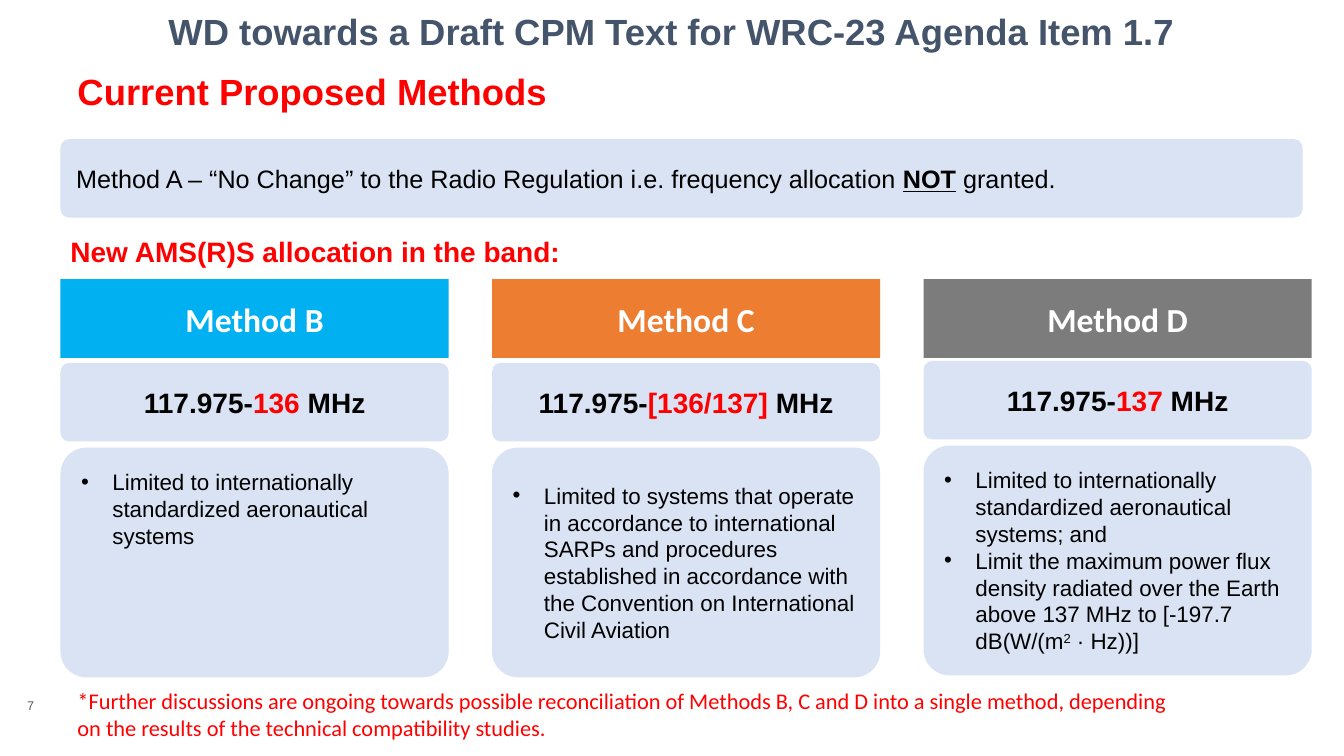
from lxml import etree
from pptx import Presentation, util as u
from pptx.dml.color import RGBColor
from pptx.enum import shapes, text
from pptx.oxml import ns

THEME = {
    "color": {"ink": "000000", "alert": "FF0000", "title": "44546A", "panel": "DAE3F3",
              "white": "FFFFFF", "number": "595959",
              "B": "00B0F0", "C": "ED7D31", "D": "7C7C7C"},
    "size": {"title": 26, "method": 24, "band": 20, "lead": 18, "body": 16, "number": 9},
    "corner": 0.113,
    "inset": 0.13,
    "indent": 0.31,
}
RECT = shapes.MSO_SHAPE.RECTANGLE
ROUND = shapes.MSO_SHAPE.ROUNDED_RECTANGLE
TOP, MIDDLE = text.MSO_ANCHOR.TOP, text.MSO_ANCHOR.MIDDLE
LEFT, CENTER = text.PP_ALIGN.LEFT, text.PP_ALIGN.CENTER

# Grid in inches
MARGIN, COLUMN, STEP = 0.6, 3.85, 4.28
TEXT_LEFT, TEXT_WIDTH = 0.67, 11.22
ROW = 0.78
HEAD_TOP, BAND_TOP, DETAIL_TOP, DETAIL_HEIGHT = 2.77, 3.6, 4.44, 2.28

deck = Presentation()
deck.slide_width, deck.slide_height = u.Inches(13.33), u.Inches(7.5)
page = deck.slides.add_slide(deck.slide_layouts[6])


def add_block(place, kind=None, fill="panel"):
    """Add a filled shape of the given kind, or a text box when there is none."""
    lengths = [u.Inches(length) for length in place]
    if kind is None:
        return page.shapes.add_textbox(*lengths)
    block = page.shapes.add_shape(kind, *lengths)
    block.shadow.inherit = False
    block.fill.solid()
    block.fill.fore_color.rgb = RGBColor.from_string(THEME["color"][fill])
    block.line.fill.background()
    if kind == ROUND:
        block.adjustments[0] = THEME["corner"]
        for side in ("left", "top", "right", "bottom"):
            setattr(block.text_frame, f"margin_{side}", u.Inches(THEME["inset"]))
    return block


def write(block, paragraphs, size, color="ink", font="Arial", bold=False, align=LEFT,
          anchor=MIDDLE, bullet=False, spacing=None):
    """Fill a block with paragraphs, each a list of (words, format changes) spans."""
    frame = block.text_frame
    frame.word_wrap, frame.vertical_anchor = True, anchor
    for index, spans in enumerate(paragraphs):
        para = frame.add_paragraph() if index else frame.paragraphs[0]
        para.alignment = align
        if spacing:
            para.line_spacing = spacing
        if bullet:
            properties = para._p.get_or_add_pPr()
            indent = u.Inches(THEME["indent"])
            properties.set("marL", str(indent))
            properties.set("indent", str(-indent))
            etree.SubElement(properties, ns.qn("a:buFont")).set("typeface", "Arial")
            etree.SubElement(properties, ns.qn("a:buChar")).set("char", "•")
        for words, changes in spans:
            span = para.add_run()
            span.text = words
            look = {"name": font, "size": u.Pt(THEME["size"][size]), "bold": bold,
                    "color": color, "raised": False} | changes
            span.font.color.rgb = RGBColor.from_string(THEME["color"][look.pop("color")])
            if look.pop("raised"):
                span.font._element.set("baseline", "30000")
            for name, value in look.items():
                setattr(span.font, name, value)


write(add_block((0, 0.02, 13.33, 0.62)),
      [[("WD towards a Draft CPM Text for WRC-23 Agenda Item 1.7", {})]],
      "title", "title", bold=True, align=CENTER, spacing=0.9)
write(add_block((TEXT_LEFT, 0.3, TEXT_WIDTH, 1.25)),
      [[("Current Proposed Methods", {})]], "title", "alert", bold=True, spacing=0.9)
write(add_block((MARGIN, 1.38, 12.32, ROW), ROUND),
      [[("Method A – “No Change” to the Radio Regulation i.e. frequency allocation ", {}),
        ("NOT", {"bold": True, "underline": True}),
        (" granted.", {})]], "lead")
write(add_block((MARGIN, 2.28, 6.66, 0.44)),
      [[("New AMS(R)S allocation in the band:", {})]],
      "band", "alert", bold=True, anchor=TOP)

# Letter, upper band limit, detail paragraphs, detail anchor, upward shift of the panels
methods = [
    ("B", "136",
     [[("Limited to internationally standardized aeronautical systems", {})]], TOP, 0),
    ("C", "[136/137]",
     [[("Limited to systems that operate in accordance to international SARPs and "
        "procedures established in accordance with the Convention on International "
        "Civil Aviation", {})]], MIDDLE, 0),
    ("D", "137",
     [[("Limited to internationally standardized aeronautical systems; and", {})],
      [("Limit the maximum power flux density radiated over the Earth above 137 MHz to "
        "[-197.7 dB(W/(m", {}), ("2", {"raised": True}), (" · Hz))]", {})]], TOP, 0.02),
]
for column, (letter, limit, details, anchor, shift) in enumerate(methods):
    left = MARGIN + column * STEP
    write(add_block((left, HEAD_TOP, COLUMN, ROW), RECT, letter),
          [[(f"Method {letter}", {})]], "method", "white", "Calibri", True, CENTER)
    write(add_block((left, BAND_TOP - shift, COLUMN, ROW), ROUND),
          [[("117.975-", {}), (f"{limit} ", {"color": "alert"}), ("MHz", {})]],
          "band", bold=True, align=CENTER)
    detail = add_block((left, DETAIL_TOP - shift, COLUMN, DETAIL_HEIGHT), ROUND)
    write(detail, details, "body", anchor=anchor, bullet=True)
    if anchor == MIDDLE:
        detail.text_frame.paragraphs[0].space_after = u.Pt(12)

write(add_block((TEXT_LEFT, 6.77, TEXT_WIDTH, 0.64)),
      [[("*Further discussions are ongoing towards possible reconciliation of Methods B, C "
         "and D into a single method, depending on the results of the technical "
         "compatibility studies.", {})]], "body", "alert", "Calibri", anchor=TOP)
write(add_block((0.17, 6.8, 2.33, 0.4)), [[("7", {})]], "number", "number")

deck.save("out.pptx")
